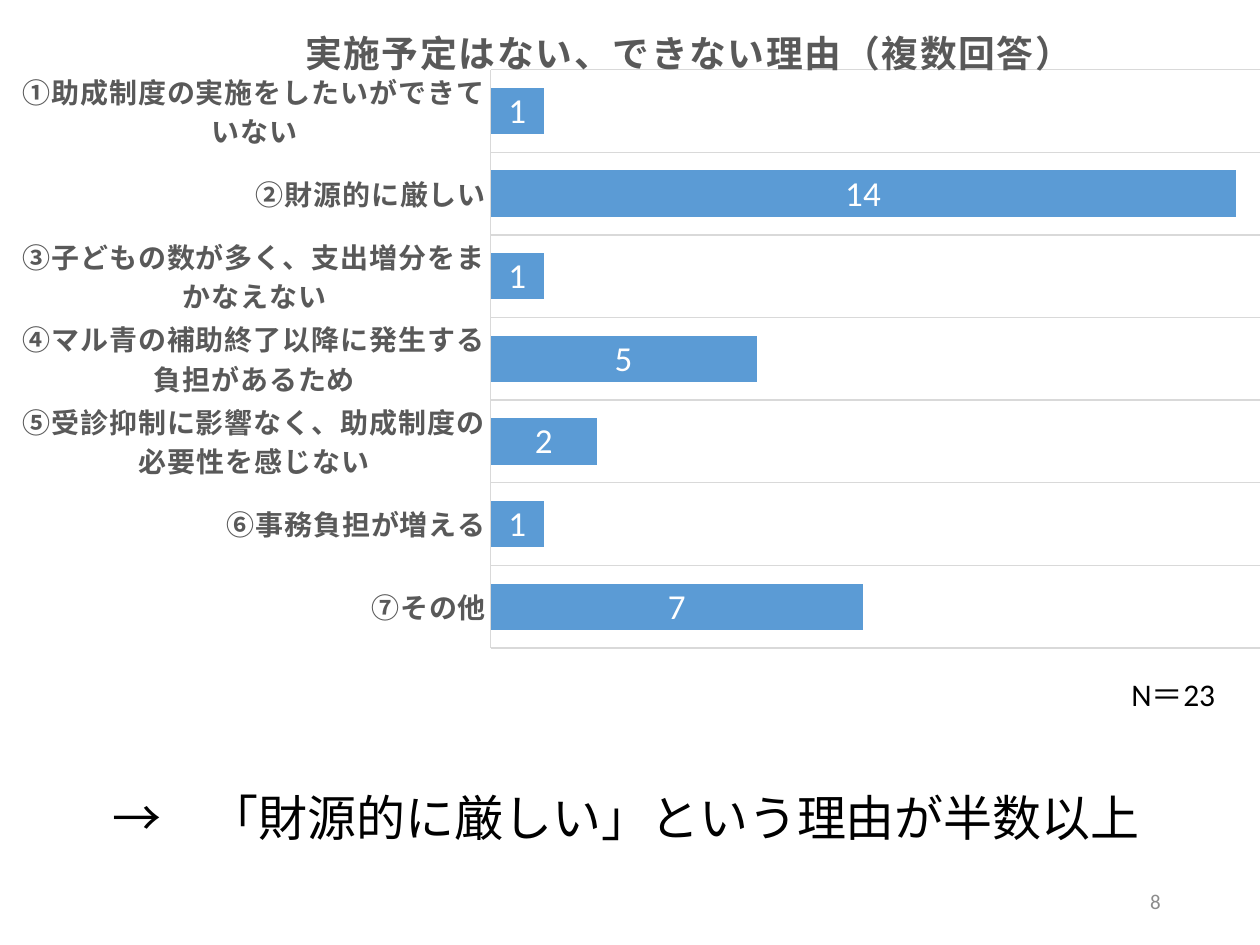
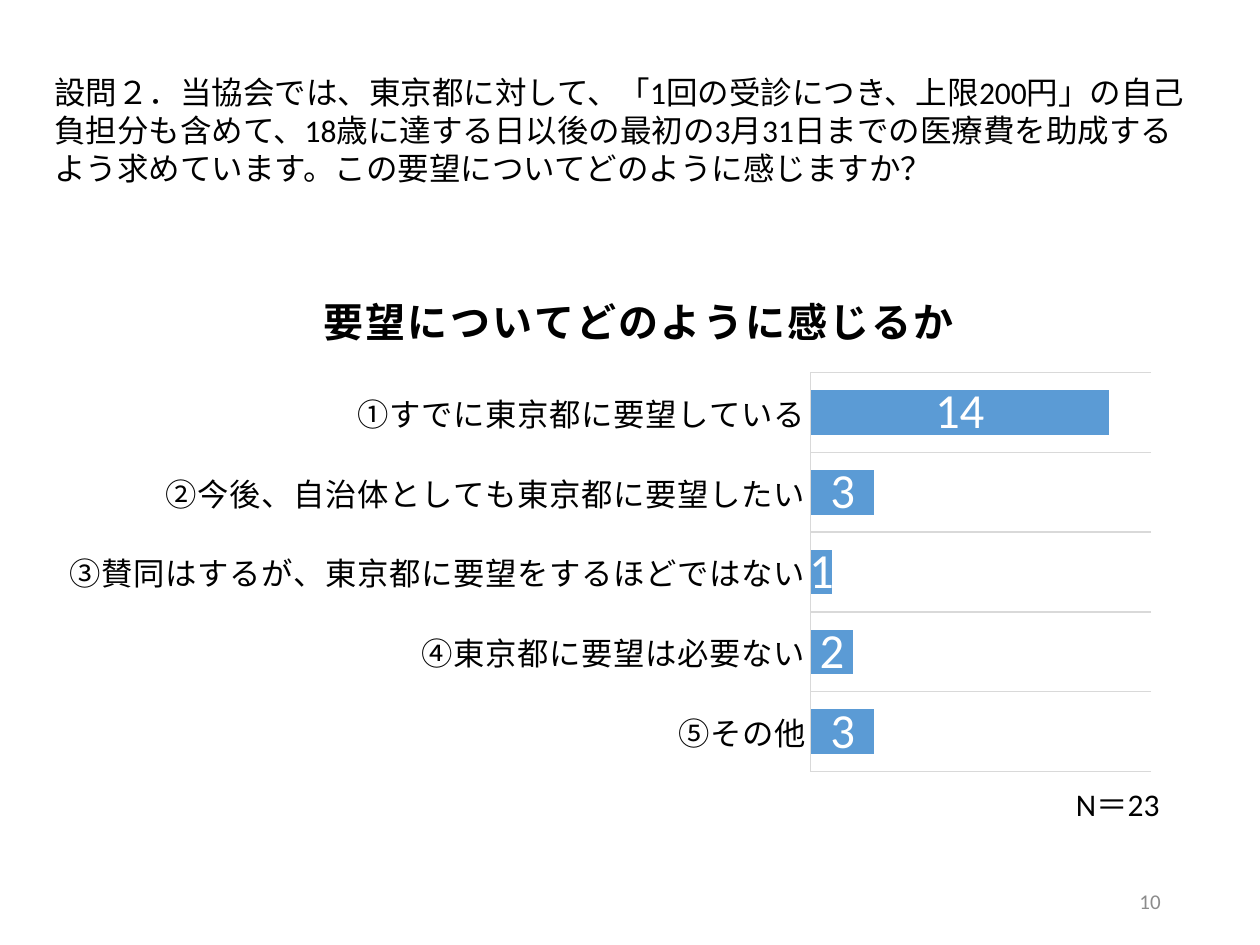
"""Build two survey slides with stacked bar charts and short remarks."""
from lxml import etree
from pptx import Presentation
from pptx.chart.data import CategoryChartData
from pptx.dml.color import RGBColor
from pptx.enum.chart import XL_CHART_TYPE, XL_LABEL_POSITION, XL_TICK_MARK
from pptx.enum.text import MSO_ANCHOR, MSO_AUTO_SIZE, PP_ALIGN
from pptx.oxml.ns import qn
from pptx.util import Cm, Pt

BAR_STACKED = XL_CHART_TYPE.BAR_STACKED
LABEL_CENTER = XL_LABEL_POSITION.CENTER
NO_TICK = XL_TICK_MARK.NONE
TOP, MIDDLE = MSO_ANCHOR.TOP, MSO_ANCHOR.MIDDLE
LEFT, RIGHT = PP_ALIGN.LEFT, PP_ALIGN.RIGHT
NO_AUTOFIT = MSO_AUTO_SIZE.NONE
TITLE_ONLY, BLANK = 5, 6

FONT = "Calibri"
BLACK = RGBColor(0x00, 0x00, 0x00)
WHITE = RGBColor(0xFF, 0xFF, 0xFF)
DARK_GRAY = RGBColor(0x59, 0x59, 0x59)
NUMBER_GRAY = RGBColor(0x8C, 0x8C, 0x8C)
LINE_GRAY = RGBColor(0xD9, 0xD9, 0xD9)
BAR_BLUE = RGBColor(0x5B, 0x9B, 0xD5)

REASONS = {
    "①助成制度の実施をしたいができていない": 1,
    "②財源的に厳しい": 14,
    "③子どもの数が多く、支出増分をまかなえない": 1,
    "④マル青の補助終了以降に発生する負担があるため": 5,
    "⑤受診抑制に影響なく、助成制度の必要性を感じない": 2,
    "⑥事務負担が増える": 1,
    "⑦その他": 7,
}
OPINIONS = {
    "①すでに東京都に要望している": 14,
    "②今後、自治体としても東京都に要望したい": 3,
    "③賛同はするが、東京都に要望をするほどではない": 1,
    "④東京都に要望は必要ない": 2,
    "⑤その他": 3,
}
QUESTION = (
    "設問２．当協会では、東京都に対して、「1回の受診につき、上限200円」の自己負担分も含めて、"
    "18歳に達する日以後の最初の3月31日までの医療費を助成するよう求めています。"
    "この要望についてどのように感じますか？"
)


def set_font(font, size, color, bold=False):
    """Apply the shared typeface with a size, colour and weight."""
    font.name = FONT
    font.size = Pt(size)
    font.color.rgb = color
    font.bold = bold


def write_text(sp, text, size, color=BLACK, align=LEFT, anchor=TOP):
    """Fill a shape with one wrapped paragraph."""
    tf = sp.text_frame
    tf.text = text
    tf.word_wrap = True
    tf.auto_size = NO_AUTOFIT
    tf.vertical_anchor = anchor
    p = tf.paragraphs[0]
    p.alignment = align
    set_font(p.font, size, color)


def add_text(slide, box, text, size, **style):
    """Add a text box; box is left, top, width, height in centimetres."""
    sp = slide.shapes.add_textbox(*map(Cm, box))
    write_text(sp, text, size, **style)


def add_sample_size(slide, left, top):
    """Add the number of respondents beside a chart."""
    add_text(slide, (left, top, 2.21, 1.02), "N＝23", 18)


def add_slide_number(slide, number):
    """Add the page number at the lower right."""
    add_text(slide, (17.93, 17.65, 5.72, 1.02), number, 12,
             color=NUMBER_GRAY, align=RIGHT, anchor=MIDDLE)


def add_question(slide, text):
    """Place the survey question in the title placeholder."""
    sp = slide.shapes.title
    sp.left, sp.top, sp.width, sp.height = map(Cm, (0.84, 1.35, 23.39, 2.57))
    write_text(sp, text, 18)


def set_layout(parent, index, **fractions):
    """Fix the place of a chart part as fractions of the chart area."""
    for old in parent.findall(qn("c:layout")):
        parent.remove(old)
    layout = etree.Element(qn("c:layout"))
    manual = etree.SubElement(layout, qn("c:manualLayout"))
    if "w" in fractions:
        etree.SubElement(manual, qn("c:layoutTarget")).set("val", "inner")
    for key in ("x", "y"):
        etree.SubElement(manual, qn(f"c:{key}Mode")).set("val", "edge")
    for key, value in fractions.items():
        etree.SubElement(manual, qn(f"c:{key}")).set("val", str(value))
    parent.insert(index, layout)


def set_spacing(element, spacing):
    """Set letter spacing, in hundredths of a point, on default text."""
    for props in element.iter(qn("a:defRPr")):
        props.set("spc", str(spacing))


def style_line(line):
    """Give an axis or grid line the thin grey look."""
    line.color.rgb = LINE_GRAY
    line.width = Pt(0.75)


def add_chart_title(chart, text, size, color, place):
    """Add a bold chart title at a fixed place."""
    chart.has_title = True
    title = chart.chart_title
    title.text_frame.text = text
    set_font(title.text_frame.paragraphs[0].font, size, color, bold=True)
    set_spacing(title._element, 100)
    set_layout(title._element, 1, x=place[0], y=place[1])


def style_axes(chart, size, color, bold, spacing):
    """Show categories from the top down and hide the value axis."""
    axis = chart.category_axis
    axis.reverse_order = True
    axis.major_tick_mark = axis.minor_tick_mark = NO_TICK
    axis.has_major_gridlines = True
    style_line(axis.major_gridlines.format.line)
    style_line(axis.format.line)
    set_font(axis.tick_labels.font, size, color, bold)
    set_spacing(axis._element, spacing)
    values = chart.value_axis
    values.minimum_scale, values.maximum_scale = 0, 16
    values.has_major_gridlines = False
    values.visible = False


def style_bars(chart, label_size):
    """Colour the bars and centre their values."""
    plot = chart.plots[0]
    plot.gap_width, plot.overlap = 79, 100
    plot.vary_by_categories = False
    fill = plot.series[0].format.fill
    fill.solid()
    fill.fore_color.rgb = BAR_BLUE
    plot.has_data_labels = True
    labels = plot.data_labels
    labels.show_value = True
    labels.position = LABEL_CENTER
    set_font(labels.font, label_size, WHITE)


def add_bar_chart(slide, box, answers, plot_area, label_size):
    """Add a bar chart of the answers and return it."""
    data = CategoryChartData()
    data.categories = answers.keys()
    data.add_series("Series 1", answers.values())
    chart = slide.shapes.add_chart(BAR_STACKED, *map(Cm, box), data).chart
    chart.has_legend = False
    set_font(chart.font, label_size, BLACK)
    style_bars(chart, label_size)
    set_layout(chart.plots[0]._element.getparent(), 0,
               **dict(zip("xywh", plot_area)))
    return chart


def build_reasons(prs):
    """Build the slide on why no subsidy is planned."""
    slide = prs.slides.add_slide(prs.slide_layouts[BLANK])
    add_slide_number(slide, "8")
    chart = add_bar_chart(slide, (0.2, 0, 27.69, 14.05), REASONS,
                          (0.35, 0.1, 0.62, 0.83), 20)
    add_chart_title(chart, "実施予定はない、できない理由（複数回答）", 21,
                    DARK_GRAY, (0.21, 0.02))
    style_axes(chart, 16, DARK_GRAY, True, 80)
    add_text(slide, (2.01, 15.75, 23.62, 1.45),
             "→　「財源的に厳しい」という理由が半数以上", 28)
    add_sample_size(slide, 22.56, 13.49)


def build_opinions(prs):
    """Build the slide on opinions about the request."""
    slide = prs.slides.add_slide(prs.slide_layouts[TITLE_ONLY])
    add_slide_number(slide, "10")
    add_question(slide, QUESTION)
    chart = add_bar_chart(slide, (1.4, 5.18, 22.25, 10.59), OPINIONS,
                          (0.67, 0.22, 0.31, 0.76), 28)
    add_chart_title(chart, "要望についてどのように感じるか", 23,
                    BLACK, (0.22, 0.04))
    style_axes(chart, 18, BLACK, False, 40)
    add_sample_size(slide, 21.44, 15.7)


def main():
    """Create and save the presentation."""
    prs = Presentation()
    prs.slide_width, prs.slide_height = Cm(25.4), Cm(19.05)
    build_reasons(prs)
    build_opinions(prs)
    prs.save("out.pptx")


if __name__ == "__main__":
    main()
